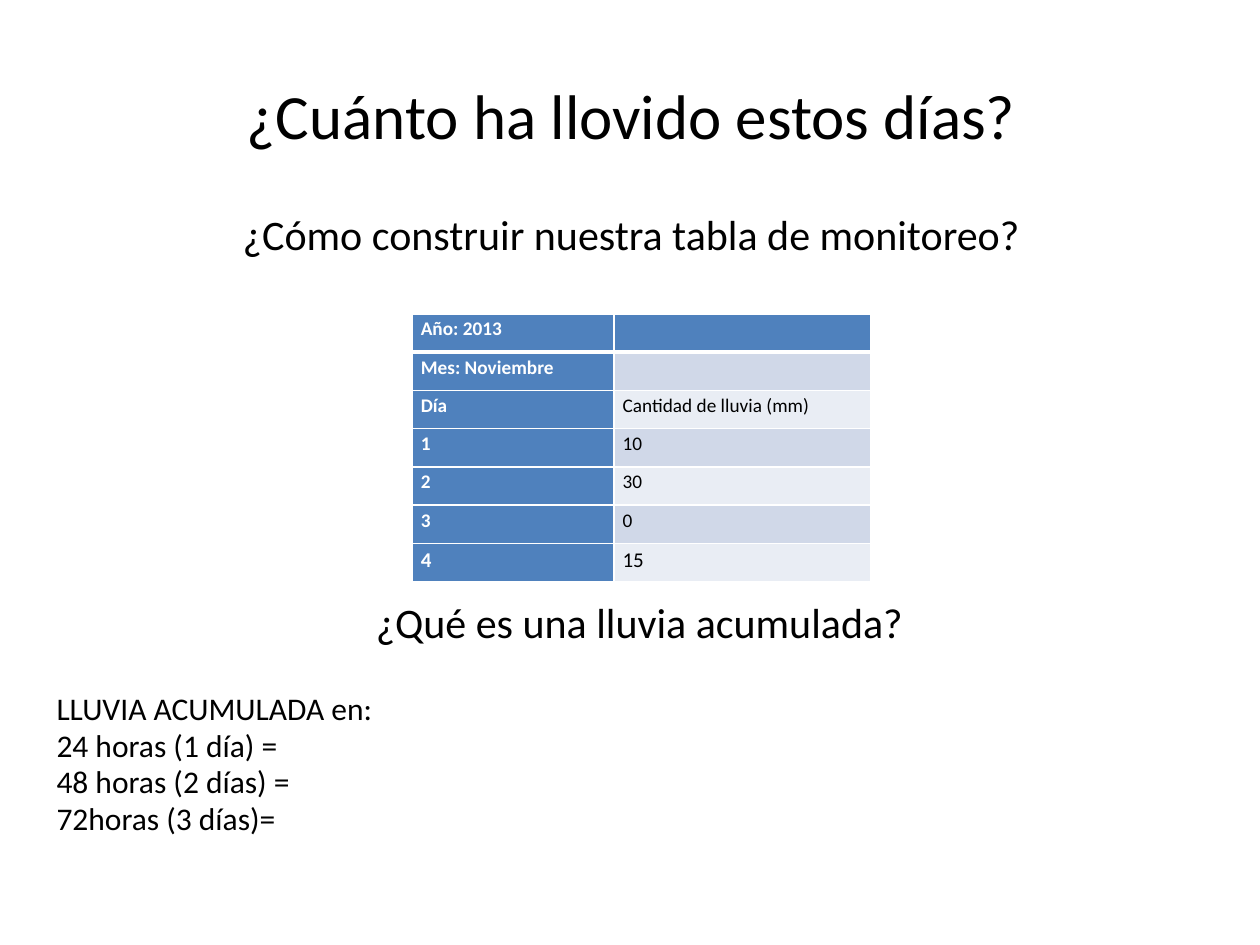
from lxml import etree
from pptx import Presentation
from pptx.dml.color import RGBColor
from pptx.enum.text import MSO_ANCHOR, PP_ALIGN
from pptx.oxml.ns import qn
from pptx.util import Inches, Pt

LEFT, CENTER, JUST = PP_ALIGN.LEFT, PP_ALIGN.CENTER, PP_ALIGN.JUSTIFY
TOP, MIDDLE = MSO_ANCHOR.TOP, MSO_ANCHOR.MIDDLE
WIDE, HIGH = 10, 7.5
FONT = "Calibri"
HUES = {"ink": "000000", "white": "FFFFFF", "blue": "4F81BD",
        "dark": "D0D8E8", "light": "E9EDF4"}


class Page:
    """Holds the style and the current slide; boxes are shares of its size."""

    def __init__(self, deck):
        self.slide = deck.slides.add_slide(deck.slide_layouts[6])

    def place(self, box):
        x, y, w, h = box
        return [Inches(n) for n in (x * WIDE, y * HIGH, w * WIDE, h * HIGH)]

    def add_run(self, para, words, size, hue="ink", bold=False, align=LEFT):
        para.alignment = align
        run = para.add_run()
        run.text = words
        font = run.font
        font.name, font.size, font.bold = FONT, Pt(size), bold
        font.color.rgb = RGBColor.from_string(HUES[hue])

    def text(self, box, lines, size, align=CENTER, anchor=MIDDLE, tight=False):
        frame = self.slide.shapes.add_textbox(*self.place(box)).text_frame
        frame.word_wrap = True
        frame.vertical_anchor = anchor
        for i, line in enumerate(lines):
            para = frame.add_paragraph() if i else frame.paragraphs[0]
            if tight:
                para.line_spacing = 0.8
                para.space_before = Pt(size * 0.2)
            self.add_run(para, line, size, align=align)

    def edge(self, cell, side, width):
        line = etree.SubElement(cell._tc.get_or_add_tcPr(), qn("a:ln" + side),
                                w=str(Pt(width)))
        fill = etree.SubElement(line, qn("a:solidFill"))
        etree.SubElement(fill, qn("a:srgbClr"), val=HUES["white"])

    def cell(self, cell, words, size, fill, hue, bold, rule):
        cell.margin_left = cell.margin_right = Inches(0.07)
        cell.margin_top = cell.margin_bottom = 0
        # Borders come before the fill in the cell's properties
        for side in "LRTB":
            self.edge(cell, side, 3 if side == rule else 1)
        cell.fill.solid()
        cell.fill.fore_color.rgb = RGBColor.from_string(HUES[fill])
        para = cell.text_frame.paragraphs[0]
        para.line_spacing, para.space_after = 1.15, Pt(3)
        if words:
            self.add_run(para, words, size, hue, bold, JUST)
        else:
            etree.SubElement(para._p, qn("a:endParaRPr"), sz=str(size * 100))

    def table(self, box, rows, cols):
        x, y, w, h = self.place(box)
        grid = self.slide.shapes.add_table(len(rows), len(cols),
                                           x, y, w, h).table
        for col, part in zip(grid.columns, cols):
            col.width = int(w * part)
        for r, row in enumerate(rows):
            grid.rows[r].height = h // len(rows)
            size = 12 if r == len(rows) - 1 else 11
            rule = {0: "B", 1: "T"}.get(r)
            for c, words in enumerate(row):
                head = r == 0 or c == 0
                fill = "blue" if head else "dark" if r % 2 else "light"
                hue = "white" if head else "ink"
                self.cell(grid.cell(r, c), words, size, fill, hue, head, rule)


def main():
    deck = Presentation()
    deck.slide_width, deck.slide_height = Inches(WIDE), Inches(HIGH)
    page = Page(deck)
    tall = 1.25 / HIGH

    # Title
    page.text((0.051, 0.28 / HIGH, 0.9, tall),
              ["¿Cuánto ha llovido estos días?"], 36)

    # Accumulated rain
    page.text((0.035, 5.48 / HIGH, 0.882, 1.34 / HIGH),
              ["LLUVIA ACUMULADA en:", "24 horas (1 día) =",
               "48 horas (2 días) =", "72horas (3 días)="],
              18, LEFT, TOP, tight=True)

    # Rain log
    page.table((0.327, 2.49 / HIGH, 0.364, 2.13 / HIGH),
               [("Año: 2013", ""), ("Mes: Noviembre", ""),
                ("Día", "Cantidad de lluvia (mm)"),
                ("1", "10"), ("2", "30"), ("3", "0"), ("4", "15")],
               (0.44, 0.56))

    # Questions above and below the log
    page.text((0.051, 1.23 / HIGH, 0.9, tall),
              ["¿Cómo construir nuestra tabla de monitoreo?"], 24)
    page.text((0.051, 4.31 / HIGH, 0.913, tall),
              ["¿Qué es una lluvia acumulada?"], 24)

    deck.save("out.pptx")


if __name__ == "__main__":
    main()
